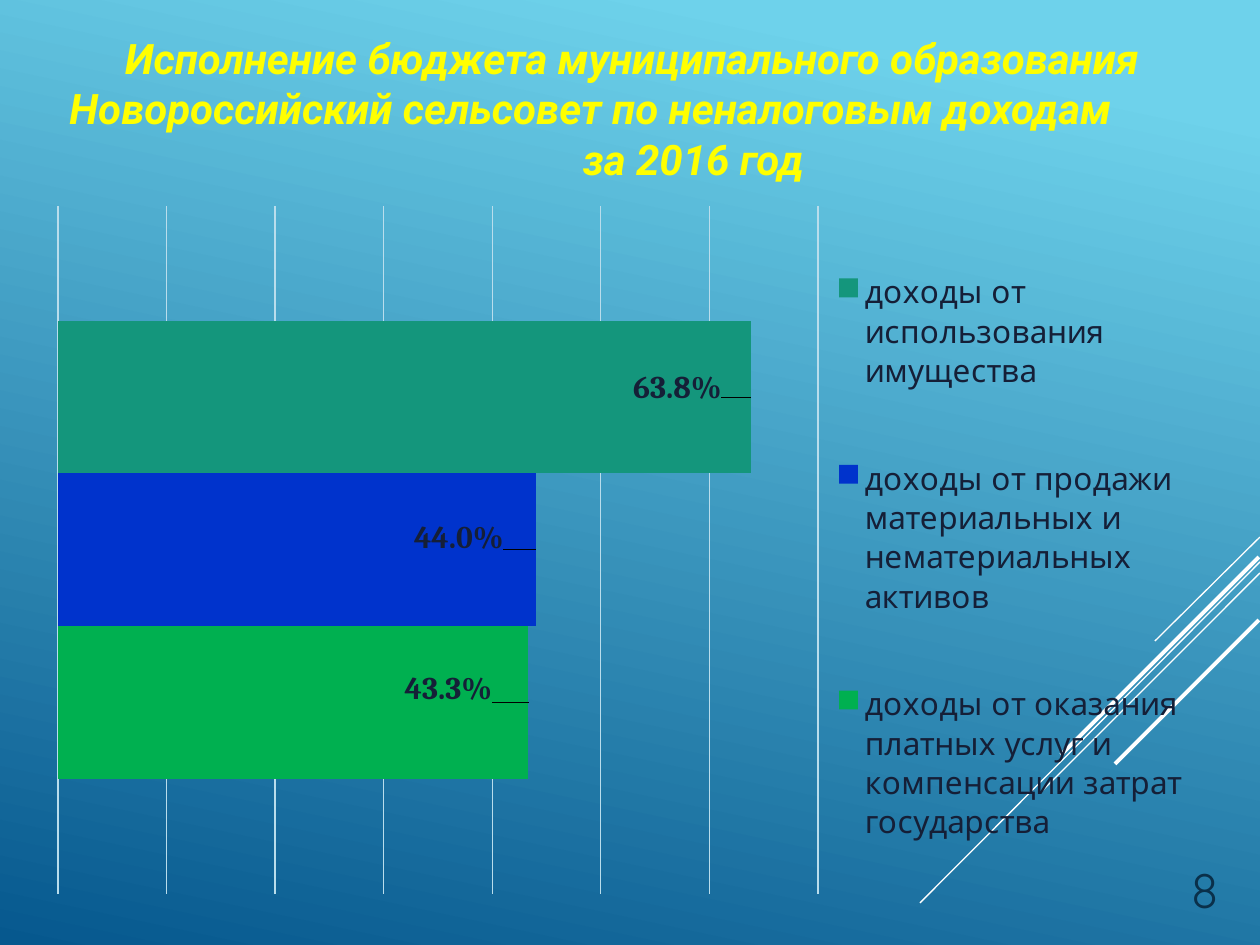
from lxml import etree
from pptx import Presentation
from pptx import util as u
from pptx.chart.data import CategoryChartData
from pptx.dml.color import RGBColor
from pptx.enum import chart as charts, shapes, text
from pptx.oxml import parse_xml
from pptx.oxml.ns import nsdecls, qn

PX = 914400 // 126
COLORS = {
    "sky": "6ED2EB", "deep": "06588E", "white": "FFFFFF", "title": "FFFF00",
    "number": "0A304A", "ink": "151F37", "grid": "B9DDEC",
    "services": "00B050", "sales": "0033CC", "property": "14967C",
}
CHART_BOX = (35, 193, 1181, 717)
PLOT_BOX = (58, 206, 760, 688)
LEGEND_BOX = (815, 204, 391, 706)
RAYS = [
    (1260, 537, 1155, 641, 0.75),
    (1260, 562, 920, 903, 0.75),
    (1260, 573, 1043, 790, 0.75),
    (1259, 557, 1061, 755, 2.25),
    (1259, 620, 1115, 764, 2.25),
]
TITLE_LINES = [
    ("Исполнение бюджета муниципального образования", 0, 0),
    ("Новороссийский сельсовет по неналоговым доходам", 0, 83),
    ("за 2016 год", 123, 0),
]
INCOMES = [
    ("доходы от оказания платных услуг и компенсации затрат государства", 0.433, "services", (-31, -14)),
    ("доходы от продажи материальных и нематериальных активов", 0.44, "sales", (-27, -12)),
    ("доходы от использования имущества", 0.638, "property", (-24, -9)),
]
LABEL_EXTENSION = (
    f'<c:extLst {nsdecls("c")}><c:ext uri="{{CE6537A1-D6FC-4f65-9D91-7224C49458BB}}" '
    'xmlns:c15="http://schemas.microsoft.com/office/drawing/2012/chart">'
    '<c15:showLeaderLines val="0"/></c:ext></c:extLst>'
)


def rgb(name):
    return RGBColor.from_string(COLORS[name])


def px(*lengths):
    return [u.Emu(length * PX) for length in lengths]


def style_font(font, name, size, color, bold=False, italic=False):
    font.name, font.size = name, u.Pt(size)
    font.bold, font.italic = bold, italic
    font.color.rgb = rgb(color)


def paint_background(page):
    fill = page.background.fill
    fill.gradient()
    fill.gradient_angle = 258
    for stop, color, position in zip(fill.gradient_stops, ("sky", "deep"), (0.1, 1)):
        stop.color.rgb = rgb(color)
        stop.position = position


def add_ray(page, x1, y1, x2, y2, width):
    ray = page.shapes.add_connector(shapes.MSO_CONNECTOR.STRAIGHT, *px(x1, y1, x2, y2))
    ray.line.color.rgb = rgb("white")
    ray.line.width = u.Pt(width)
    etree.SubElement(ray._element.spPr, qn("a:effectLst"))


def set_title(page):
    title = page.shapes.title
    title.left, title.top, title.width, title.height = px(57, 26, 1150, 165)
    frame = title.text_frame
    frame.text = "\n".join(line for line, _, _ in TITLE_LINES)
    frame.word_wrap = True
    frame.auto_size = text.MSO_AUTO_SIZE.NONE
    frame.vertical_anchor = text.MSO_ANCHOR.TOP
    frame.margin_left = frame.margin_right = 0
    for para, (_, left, right) in zip(frame.paragraphs, TITLE_LINES):
        para.alignment = text.PP_ALIGN.CENTER
        properties = para._p.get_or_add_pPr()
        properties.set("marL", str(left * PX))
        properties.set("marR", str(right * PX))
        style_font(para.runs[0].font, "Roboto", 24, "title", True, True)


def add_page_number(page, number):
    box = page.shapes.add_textbox(*px(963, 890, 268, 35))
    frame = box.text_frame
    frame.text = number
    frame.word_wrap = True
    frame.vertical_anchor = text.MSO_ANCHOR.BOTTOM
    para = frame.paragraphs[0]
    para.alignment = text.PP_ALIGN.RIGHT
    style_font(para.runs[0].font, "Quicksand", 28, "number")


def manual_layout(values, target="", edges=True):
    modes = '<c:xMode val="edge"/><c:yMode val="edge"/>' if edges else ""
    sizes = "".join(f'<c:{key} val="{value:.4f}"/>' for key, value in zip("xywh", values))
    return parse_xml(f'<c:layout {nsdecls("c")}><c:manualLayout>{target}{modes}{sizes}'
                     '</c:manualLayout></c:layout>')


def chart_fractions(box):
    left, top, width, height = CHART_BOX
    return ((box[0] - left) / width, (box[1] - top) / height, box[2] / width, box[3] / height)


def replace_layout(parent, layout, index):
    for old in parent.findall(qn("c:layout")):
        parent.remove(old)
    parent.insert(index, layout)


def hide_leader_lines(labels):
    for old in labels.findall(qn("c:showLeaderLines")):
        labels.remove(old)
    labels.append(parse_xml(LABEL_EXTENSION))


def style_series(series, color, offset):
    series.format.fill.solid()
    series.format.fill.fore_color.rgb = rgb(color)
    series.invert_if_negative = False
    label = series.points[0].data_label
    style_font(label.font, "Cambria", 18, "ink", True)
    label.position = charts.XL_LABEL_POSITION.INSIDE_END
    element = series._element.find(".//" + qn("c:dLbl"))
    shift = (offset[0] / CHART_BOX[2], offset[1] / CHART_BOX[3])
    replace_layout(element, manual_layout(shift, edges=False), 1)
    element.insert(2, parse_xml(f'<c:numFmt {nsdecls("c")} formatCode="0.0%" sourceLinked="0"/>'))
    hide_leader_lines(element.getparent())


def add_income_chart(page):
    data = CategoryChartData(number_format="0.0%")
    data.categories = ["1"]
    for name, value, _, _ in INCOMES:
        data.add_series(name, [value])
    chart = page.shapes.add_chart(charts.XL_CHART_TYPE.BAR_CLUSTERED, *px(*CHART_BOX), data).chart
    style_font(chart.font, "Quicksand", 18, "white")
    chart.has_title = False

    plot = chart.plots[0]
    plot.gap_width, plot.overlap = 150, 0
    plot.vary_by_categories = False
    for series, (_, _, color, offset) in zip(plot.series, INCOMES):
        style_series(series, color, offset)

    chart.category_axis.visible = False
    axis = chart.value_axis
    axis.visible = False
    axis.minimum_scale, axis.maximum_scale, axis.major_unit = 0, 0.7, 0.1
    axis.has_major_gridlines = True
    axis.major_gridlines.format.line.color.rgb = rgb("grid")
    axis.major_gridlines.format.line.width = u.Pt(0.75)

    chart.has_legend = True
    legend = chart.legend
    legend.position = charts.XL_LEGEND_POSITION.RIGHT
    legend.include_in_layout = False
    style_font(legend.font, "Quicksand", 18, "ink")
    replace_layout(legend._element, manual_layout(chart_fractions(LEGEND_BOX)), 1)
    area = chart._chartSpace.find(".//" + qn("c:plotArea"))
    inner = '<c:layoutTarget val="inner"/>'
    replace_layout(area, manual_layout(chart_fractions(PLOT_BOX), inner), 0)


def main():
    deck = Presentation()
    deck.slide_width, deck.slide_height = px(1260, 945)
    page = deck.slides.add_slide(deck.slide_layouts.get_by_name("Title Only"))
    paint_background(page)
    for ray in RAYS:
        add_ray(page, *ray)
    add_page_number(page, "8")
    set_title(page)
    add_income_chart(page)
    deck.save("out.pptx")


if __name__ == "__main__":
    main()
